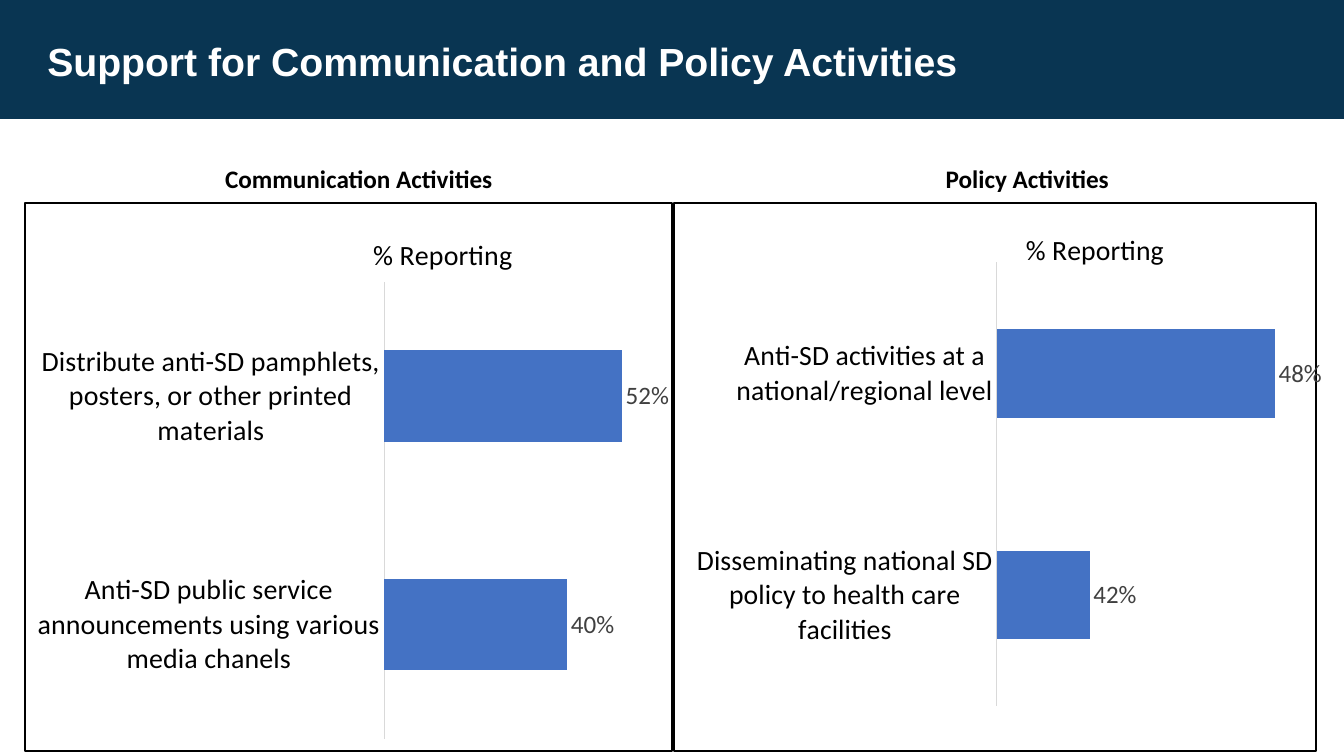
from dataclasses import dataclass

from lxml import etree
from pptx import Presentation
from pptx.chart.chart import Chart
from pptx.chart.data import CategoryChartData
from pptx.dml.color import RGBColor
from pptx.enum.chart import XL_CHART_TYPE, XL_LABEL_POSITION, XL_TICK_MARK
from pptx.enum.shapes import MSO_SHAPE
from pptx.enum.text import PP_ALIGN
from pptx.oxml.ns import qn
from pptx.slide import Slide
from pptx.util import Inches, Pt

BAR_CLUSTERED = XL_CHART_TYPE.BAR_CLUSTERED
OUTSIDE_END = XL_LABEL_POSITION.OUTSIDE_END
NO_TICK = XL_TICK_MARK.NONE
RECTANGLE = MSO_SHAPE.RECTANGLE
LEFT, CENTER = PP_ALIGN.LEFT, PP_ALIGN.CENTER

WIDTH, HEIGHT = Inches(13.33), Inches(7.5)
COLORS = {
    "band": "093552",
    "white": "FFFFFF",
    "black": "000000",
    "bar": "4472C4",
    "axis": "D9D9D9",
    "value": "404040",
}
TITLE_FONT = {"name": "Arial", "size": Pt(28), "bold": True}
HEADING_FONT = {"name": "Calibri", "size": Pt(18), "bold": True}
CATEGORY_FONT = {"name": "Calibri", "size": Pt(20), "bold": False}
VALUE_FONT = {"name": "Calibri", "size": Pt(18), "bold": False}
HIDDEN_AXIS = {"visible": False, "has_major_gridlines": False}
CATEGORY_AXIS = {"major_tick_mark": NO_TICK, "minor_tick_mark": NO_TICK, "has_major_gridlines": False}
VALUE_LABELS = {
    "show_value": True,
    "number_format": "0%",
    "number_format_is_linked": False,
    "position": OUTSIDE_END,
}
BARS = {"gap_width": 150, "overlap": -25, "vary_by_categories": False}


@dataclass(frozen=True)
class Box:
    """Percentages of the slide's width and height."""

    left: float
    top: float
    width: float
    height: float

    def lengths(self) -> tuple[int, int, int, int]:
        return (
            int(WIDTH * self.left / 100),
            int(HEIGHT * self.top / 100),
            int(WIDTH * self.width / 100),
            int(HEIGHT * self.height / 100),
        )


@dataclass(frozen=True)
class Panel:
    heading: str
    heading_left: float
    support: dict[str, float]
    scale: tuple[float, float]
    title_place: dict[str, float]
    plot_place: dict[str, float]


PANEL_LEFT, PANEL_WIDTH = 1.8, 48.28
PANELS = [
    Panel(
        "Communication Activities",
        12.45,
        {
            "Anti-SD public service announcements using various media chanels": 0.4,
            "Distribute anti-SD pamphlets, posters, or other printed materials": 0.52,
        },
        (0, 0.6),
        {"x": 0.53, "y": 0.05},
        {"x": 0.555, "y": 0.144, "w": 0.424, "h": 0.834},
    ),
    Panel(
        "Policy Activities",
        62.19,
        {
            "Disseminating national SD policy to health care facilities": 0.42,
            "Anti-SD activities at a national/regional level": 0.48,
        },
        (0.39, 0.49),
        {"x": 0.54, "y": 0.04},
        {"x": 0.503, "y": 0.109, "w": 0.481, "h": 0.809},
    ),
]


def color(name: str) -> RGBColor:
    return RGBColor.from_string(COLORS[name])


def apply_format(target: object, values: dict[str, object]) -> None:
    for name, value in values.items():
        setattr(target, name, value)


def style_font(font: object, values: dict[str, object], color_name: str) -> None:
    apply_format(font, values)
    font.color.rgb = color(color_name)


def add_text(slide: Slide, box: Box, text: str, font: dict, color_name: str,
             alignment: PP_ALIGN, spacing: float) -> None:
    frame = slide.shapes.add_textbox(*box.lengths()).text_frame
    frame.word_wrap = True
    paragraph = frame.paragraphs[0]
    apply_format(paragraph, {"text": text, "alignment": alignment, "line_spacing": spacing})
    style_font(paragraph.runs[0].font, font, color_name)


def place(element: etree._Element, position: dict[str, float], inner: bool) -> None:
    layout = element.find(qn("c:layout"))
    if layout is None:
        layout = etree.Element(qn("c:layout"))
        element.insert(0, layout)
    manual = etree.SubElement(layout, qn("c:manualLayout"))
    if inner:
        etree.SubElement(manual, qn("c:layoutTarget"), val="inner")
    for axis in ("x", "y"):
        etree.SubElement(manual, qn(f"c:{axis}Mode"), val="edge")
    for name, share in position.items():
        etree.SubElement(manual, qn(f"c:{name}"), val=str(share))


def add_border(chart: Chart) -> None:
    properties = etree.Element(qn("c:spPr"))
    etree.SubElement(properties, qn("a:noFill"))
    line = etree.SubElement(properties, qn("a:ln"), w=str(Pt(1.5)))
    fill = etree.SubElement(line, qn("a:solidFill"))
    etree.SubElement(fill, qn("a:srgbClr"), val=COLORS["black"])
    chart.element.find(qn("c:chart")).addnext(properties)


def add_panel(slide: Slide, column: int, panel: Panel) -> None:
    data = CategoryChartData(number_format="0%")
    data.categories = list(panel.support)
    data.add_series("Series 1", list(panel.support.values()))
    box = Box(PANEL_LEFT + column * PANEL_WIDTH, 26.67, PANEL_WIDTH, 72.8)
    chart = slide.shapes.add_chart(BAR_CLUSTERED, *box.lengths(), data).chart
    apply_format(chart, {"has_legend": False, "has_title": True})
    style_font(chart.font, VALUE_FONT, "black")
    add_border(chart)

    title = chart.chart_title
    title.text_frame.text = "% Reporting"
    style_font(title.text_frame.paragraphs[0].runs[0].font, CATEGORY_FONT, "black")
    place(title.element if hasattr(title, "element") else title._element, panel.title_place, False)
    place(chart.element.find(qn("c:chart")).find(qn("c:plotArea")), panel.plot_place, True)

    minimum, maximum = panel.scale
    apply_format(chart.value_axis, HIDDEN_AXIS | {"minimum_scale": minimum, "maximum_scale": maximum})
    category_axis = chart.category_axis
    apply_format(category_axis, CATEGORY_AXIS)
    style_font(category_axis.tick_labels.font, CATEGORY_FONT, "black")
    category_axis.format.line.color.rgb = color("axis")
    category_axis.format.line.width = Pt(0.75)

    plot = chart.plots[0]
    apply_format(plot, BARS)
    series = plot.series[0]
    series.format.fill.solid()
    series.format.fill.fore_color.rgb = color("bar")
    apply_format(series.data_labels, VALUE_LABELS)
    style_font(series.data_labels.font, VALUE_FONT, "value")

    heading_box = Box(panel.heading_left, 20.93, 28.5, 5.33)
    add_text(slide, heading_box, panel.heading, HEADING_FONT, "black", CENTER, 1.0)


def main() -> None:
    presentation = Presentation()
    apply_format(presentation, {"slide_width": WIDTH, "slide_height": HEIGHT})
    slide = presentation.slides.add_slide(presentation.slide_layouts[6])
    band = slide.shapes.add_shape(RECTANGLE, *Box(0, 0, 100, 15.73).lengths())
    band.shadow.inherit = False
    band.fill.solid()
    band.fill.fore_color.rgb = color("band")
    band.line.fill.background()
    title_box = Box(2.78, 4.93, 90.32, 10.67)
    add_text(slide, title_box, "Support for Communication and Policy Activities",
             TITLE_FONT, "white", LEFT, 0.9)
    for column, panel in enumerate(PANELS):
        add_panel(slide, column, panel)
    presentation.save("out.pptx")


if __name__ == "__main__":
    main()
